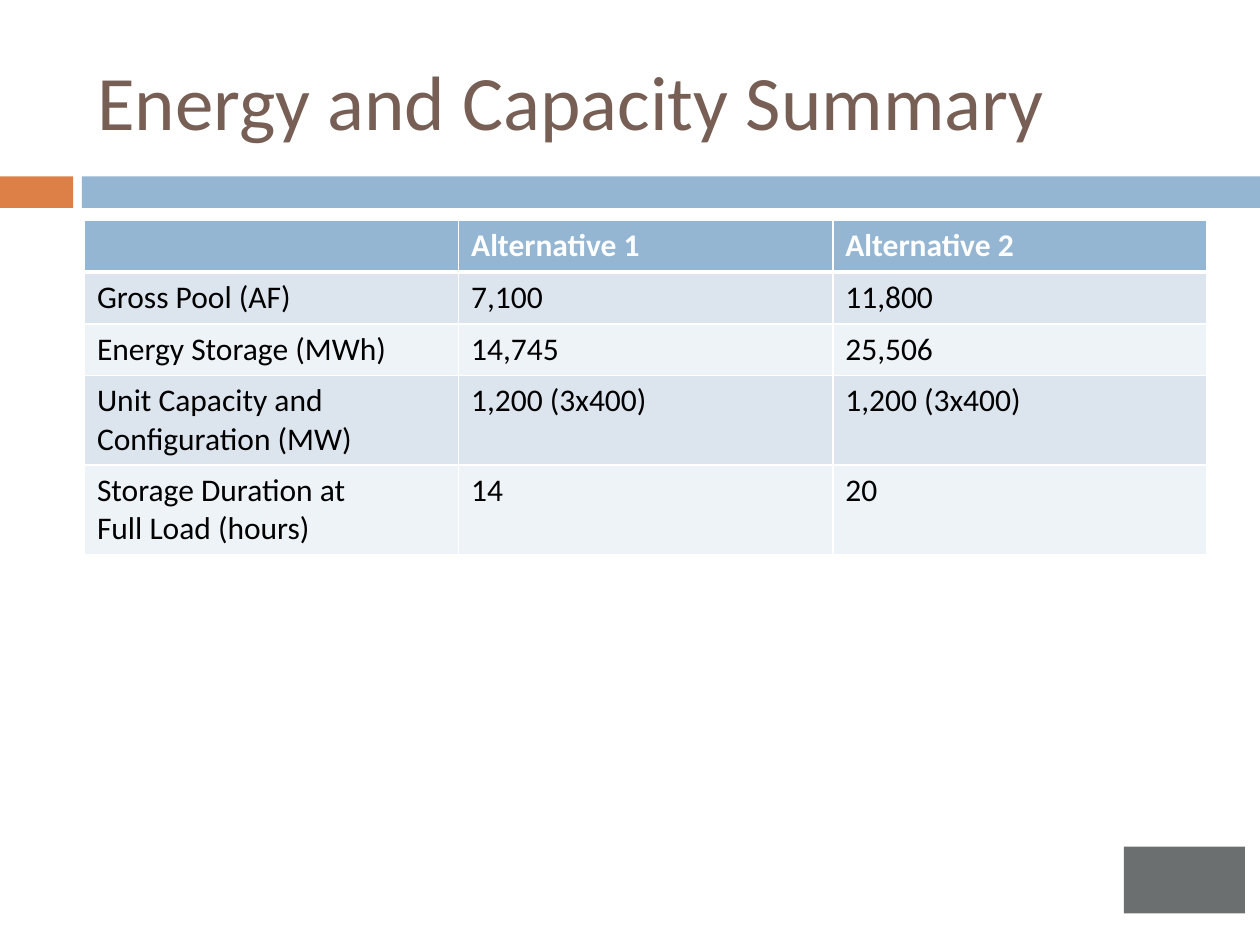
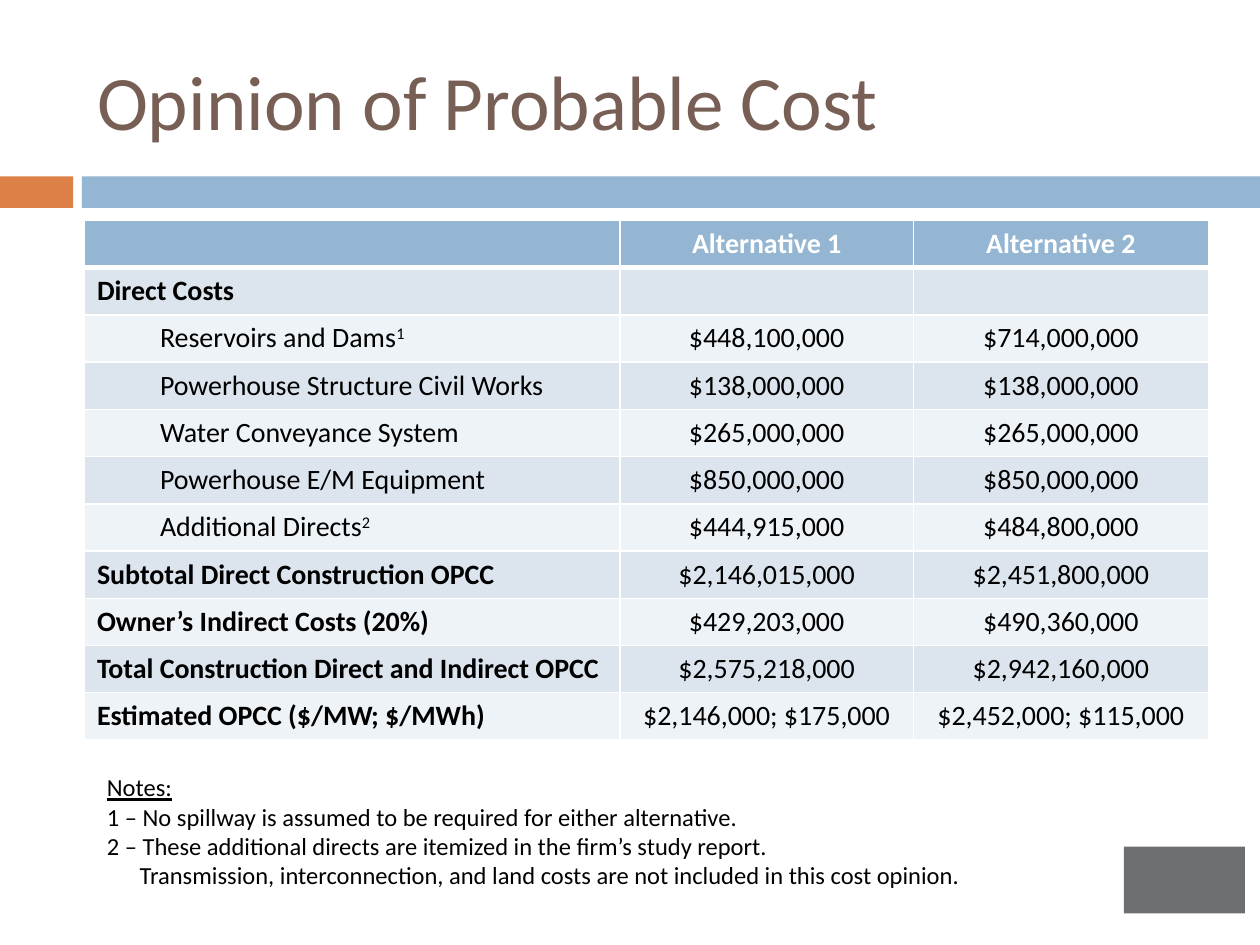
from lxml import etree
from pptx import Presentation
from pptx.dml.color import RGBColor as RGB
from pptx.enum.shapes import MSO_SHAPE as SHAPE
from pptx.enum.text import MSO_ANCHOR as ANCHOR, PP_ALIGN as ALIGN
from pptx.oxml.ns import qn
from pptx.util import Inches, Pt

FONT = "Calibri"
COLORS = {
    "title": "775F55", "accent": "DD8047", "band": "94B6D2", "mark": "6C6F70",
    "odd_row": "DCE5EE", "even_row": "EEF3F7", "white": "FFFFFF", "text": "000000",
}

# left, top, width, height, colour of the shapes on every slide
FRAME = [
    (0, 1.4, 0.58, 0.25, "accent"),
    (0.65, 1.4, 9.35, 0.25, "band"),
    (8.92, 6.72, 0.96, 0.53, "mark"),
]

HEADER = ("", "Alternative 1", "Alternative 2")

# A leading ">" indents a label; "^" starts a superscript
SLIDES = [
    dict(title="Energy and Capacity Summary", size=18, row_height=0.41,
         widths=(2.97, 2.97, 2.97), align=ALIGN.LEFT, bold_labels=False,
         rows=[
             HEADER,
             ("Gross Pool (AF)", "7,100", "11,800"),
             ("Energy Storage (MWh)", "14,745", "25,506"),
             ("Unit Capacity and Configuration (MW)", "1,200 (3x400)", "1,200 (3x400)"),
             ("Storage Duration at\nFull Load (hours)", "14", "20"),
         ]),
    dict(title="Opinion of Probable Cost", size=16, row_height=0.375,
         widths=(4.25, 2.33, 2.34), align=ALIGN.CENTER, bold_labels=True,
         rows=[
             HEADER,
             ("Direct Costs", "", ""),
             (">Reservoirs and Dams^1", "$448,100,000", "$714,000,000"),
             (">Powerhouse Structure Civil Works", "$138,000,000", "$138,000,000"),
             (">Water Conveyance System", "$265,000,000", "$265,000,000"),
             (">Powerhouse E/M Equipment", "$850,000,000", "$850,000,000"),
             (">Additional Directs^2", "$444,915,000", "$484,800,000"),
             ("Subtotal Direct Construction OPCC", "$2,146,015,000", "$2,451,800,000"),
             ("Owner’s Indirect Costs (20%)", "$429,203,000", "$490,360,000"),
             ("Total Construction Direct and Indirect OPCC", "$2,575,218,000", "$2,942,160,000"),
             ("Estimated OPCC ($/MW; $/MWh)", "$2,146,000; $175,000", "$2,452,000; $115,000"),
         ]),
]

# text, underline, indent
NOTES = [
    ("Notes:", True, 0),
    ("1 – No spillway is assumed to be required for either alternative.", False, 0),
    ("2 – These additional directs are itemized in the firm’s study report.", False, 0),
    ("Transmission, interconnection, and land costs are not included in this cost opinion.",
     False, 0.26),
]


def write(tf, text, size, color="text", bold=False, underline=False,
          align=ALIGN.LEFT, indent=0):
    """Append one paragraph per line; "^" starts a superscript."""
    for line in text.split("\n"):
        p = tf.add_paragraph() if tf.text else tf.paragraphs[0]
        p.alignment = align
        if indent:
            p._p.get_or_add_pPr().set("marL", str(Inches(indent)))
        if not line:
            p._p.get_or_add_endParaRPr().set("sz", str(size * 100))
            continue
        for i, part in enumerate(line.split("^")):
            r = p.add_run()
            r.text = part
            r.font.name, r.font.size = FONT, Pt(size)
            r.font.bold, r.font.underline = bold, underline
            r.font.color.rgb = RGB.from_string(COLORS[color])
            if i:
                r.font._element.set("baseline", "30000")


def format_cell(cell, fill, top=1, bottom=1):
    """Fill a cell and give it white borders, with widths in points."""
    tcPr = cell._tc.get_or_add_tcPr()
    for side, width in (("L", 1), ("R", 1), ("T", top), ("B", bottom)):
        ln = etree.SubElement(tcPr, qn(f"a:ln{side}"), w=str(Pt(width)))
        solid = etree.SubElement(ln, qn("a:solidFill"))
        etree.SubElement(solid, qn("a:srgbClr"), val=COLORS["white"])
    cell.fill.solid()
    cell.fill.fore_color.rgb = RGB.from_string(COLORS[fill])


prs = Presentation()
prs.slide_width, prs.slide_height = Inches(10), Inches(7.5)
title_only = prs.slide_layouts[5]

for data in SLIDES:
    s = prs.slides.add_slide(title_only)

    for *box, color in FRAME:
        sp = s.shapes.add_shape(SHAPE.RECTANGLE, *map(Inches, box))
        sp.shadow.inherit = False
        sp.fill.solid()
        sp.fill.fore_color.rgb = RGB.from_string(COLORS[color])
        sp.line.fill.background()

    title = s.shapes.title
    title.left, title.top = Inches(0.67), Inches(0.25)
    title.width, title.height = Inches(8.92), Inches(1.08)
    title.text_frame.vertical_anchor = ANCHOR.MIDDLE
    write(title.text_frame, data["title"], 44, color="title")

    rows, widths, row_height = data["rows"], data["widths"], data["row_height"]
    table = s.shapes.add_table(
        len(rows), len(widths), Inches(0.67), Inches(1.75),
        Inches(sum(widths)), Inches(row_height * len(rows))).table
    for column, width in zip(table.columns, widths):
        column.width = Inches(width)

    for i, row in enumerate(rows):
        table.rows[i].height = Inches(row_height)
        is_header = i == 0
        fill = "band" if is_header else "odd_row" if i % 2 else "even_row"
        for j, text in enumerate(row):
            cell = table.cell(i, j)
            format_cell(cell, fill, top=3 if i == 1 else 1, bottom=3 if is_header else 1)
            is_label, is_item = j == 0, text.startswith(">")
            write(cell.text_frame, text.lstrip(">"), data["size"],
                  color="white" if is_header else "text",
                  bold=is_header or (is_label and data["bold_labels"] and not is_item),
                  align=ALIGN.LEFT if is_label else data["align"],
                  indent=0.5 if is_item else 0)

# The notes belong to the cost slide, the last one built
notes = s.shapes.add_textbox(Inches(0.75), Inches(6.08), Inches(8.75), Inches(1.04))
notes.text_frame.word_wrap = True
for text, underline, indent in NOTES:
    write(notes.text_frame, text, 14, underline=underline, indent=indent)

prs.save("out.pptx")
